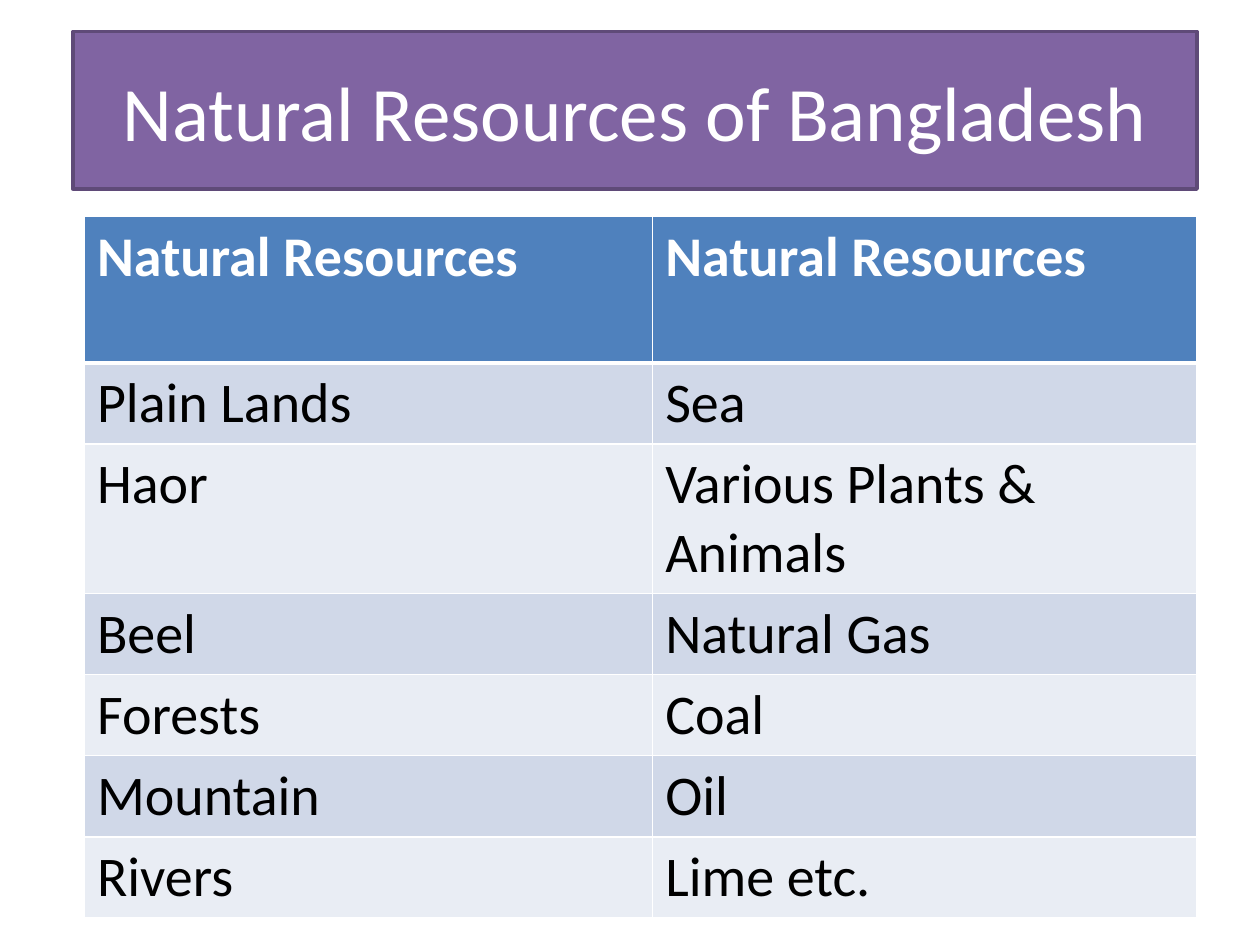
from dataclasses import dataclass

from lxml import etree
from pptx import Presentation
from pptx.dml.color import RGBColor
from pptx.enum.shapes import MSO_SHAPE
from pptx.enum.text import MSO_ANCHOR, PP_ALIGN
from pptx.oxml.ns import qn
from pptx.util import Inches, Pt

RECT = MSO_SHAPE.RECTANGLE
MIDDLE = MSO_ANCHOR.MIDDLE
LEFT, CENTER = PP_ALIGN.LEFT, PP_ALIGN.CENTER

FONT = "Calibri"
COLORS = {
    "title": "8064A2",
    "title_line": "5F4A78",
    "header": "4F81BD",
    "odd": "D0D8E8",
    "even": "E9EDF4",
    "white": "FFFFFF",
    "black": "000000",
}
SLIDE_W, SLIDE_H = 10, 7.5
COLUMN_WIDTHS = (4.51, 4.32)
SINGLE_ROW, DOUBLE_ROW = 0.63, 1.16


@dataclass
class Row:
    texts: tuple[str, str]
    height: float = SINGLE_ROW


ROWS = [
    Row(("Natural Resources", "Natural Resources"), DOUBLE_ROW),
    Row(("Plain Lands", "Sea")),
    Row(("Haor", "Various Plants & Animals"), DOUBLE_ROW),
    Row(("Beel", "Natural Gas")),
    Row(("Forests", "Coal")),
    Row(("Mountain", "Oil")),
    Row(("Rivers", "Lime etc.")),
]


def rgb(name: str) -> RGBColor:
    return RGBColor.from_string(COLORS[name])


def write(tf, text: str, *, size: int, color: str, bold: bool = False, align=LEFT) -> None:
    p = tf.paragraphs[0]
    p.alignment = align
    r = p.add_run()
    r.text = text
    r.font.name = FONT
    r.font.size = Pt(size)
    r.font.bold = bold
    r.font.color.rgb = rgb(color)


def set_borders(cell, widths: dict[str, float]) -> None:
    """Draw white cell borders; call before filling, as the schema puts lines first."""
    tc_pr = cell._tc.get_or_add_tcPr()
    for side, width in widths.items():
        ln = etree.SubElement(tc_pr, qn(f"a:ln{side}"), w=str(Pt(width)))
        fill = etree.SubElement(ln, qn("a:solidFill"))
        etree.SubElement(fill, qn("a:srgbClr"), val=COLORS["white"])


def add_title(s, text: str) -> None:
    sp = s.shapes.add_shape(RECT, Inches(0.58), Inches(0.25), Inches(8.92), Inches(1.25))
    sp.shadow.inherit = False
    sp.fill.solid()
    sp.fill.fore_color.rgb = rgb("title")
    sp.line.color.rgb = rgb("title_line")
    sp.line.width = Pt(2)
    tf = sp.text_frame
    tf.word_wrap = True
    tf.vertical_anchor = MIDDLE
    write(tf, text, size=44, color="white", align=CENTER)


def add_resource_table(s, rows: list[Row]) -> None:
    height = sum(row.height for row in rows)
    frame = s.shapes.add_table(len(rows), len(COLUMN_WIDTHS), Inches(0.67), Inches(1.72),
                               Inches(sum(COLUMN_WIDTHS)), Inches(height))
    table = frame.table
    for column, width in zip(table.columns, COLUMN_WIDTHS):
        column.width = Inches(width)
    for i, row in enumerate(rows):
        table.rows[i].height = Inches(row.height)
        is_header = i == 0
        fill = "header" if is_header else ("odd" if i % 2 else "even")
        top, bottom = 3 if i == 1 else 1, 3 if is_header else 1
        for j, text in enumerate(row.texts):
            cell = table.cell(i, j)
            set_borders(cell, {"L": 1, "R": 1, "T": top, "B": bottom})
            cell.fill.solid()
            cell.fill.fore_color.rgb = rgb(fill)
            write(cell.text_frame, text, size=32, bold=is_header,
                  color="white" if is_header else "black")


def main() -> None:
    prs = Presentation()
    prs.slide_width, prs.slide_height = Inches(SLIDE_W), Inches(SLIDE_H)
    s = prs.slides.add_slide(prs.slide_layouts[6])
    add_title(s, "Natural Resources of Bangladesh")
    add_resource_table(s, ROWS)
    prs.save("out.pptx")


if __name__ == "__main__":
    main()
